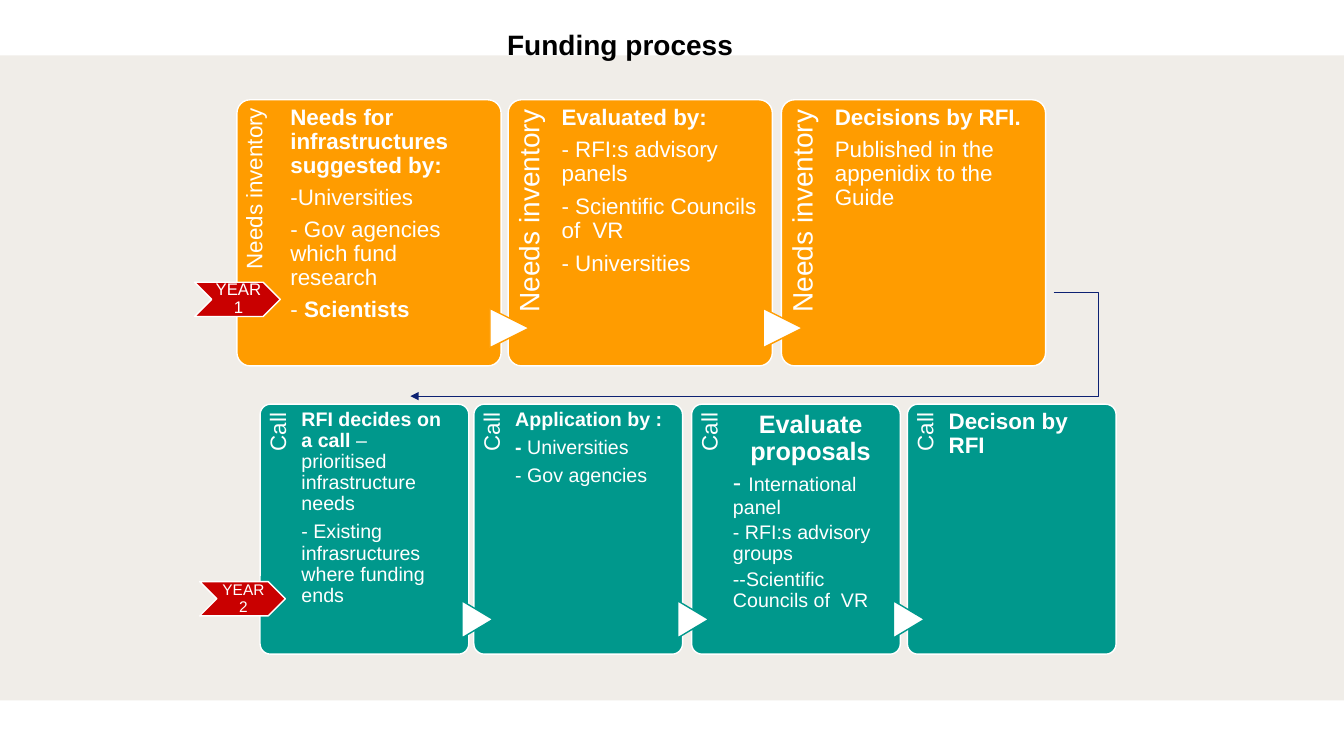
from dataclasses import dataclass

from lxml import etree
from pptx import Presentation
from pptx.dml.color import RGBColor
from pptx.enum.shapes import MSO_CONNECTOR, MSO_SHAPE
from pptx.enum.text import MSO_ANCHOR, MSO_AUTO_SIZE, PP_ALIGN
from pptx.oxml.ns import qn
from pptx.util import Emu, Pt

PX = 9144
FONT = "Arial"
WHITE, ORANGE, TEAL, RED = "FFFFFF", "FF9C00", "00988C", "C90000"
LEFT, CENTER, RIGHT = PP_ALIGN.LEFT, PP_ALIGN.CENTER, PP_ALIGN.RIGHT
TOP, MIDDLE = MSO_ANCHOR.TOP, MSO_ANCHOR.MIDDLE
RECT, ROUND_RECT = MSO_SHAPE.RECTANGLE, MSO_SHAPE.ROUNDED_RECTANGLE
CHEVRON, TRIANGLE = MSO_SHAPE.CHEVRON, MSO_SHAPE.FLOWCHART_EXTRACT
ELBOW = MSO_CONNECTOR.ELBOW
NO_FIT = MSO_AUTO_SIZE.NONE


@dataclass
class Run:
    text: str
    size: int = 16
    bold: bool = False


@dataclass
class Para:
    runs: list[Run]
    align: PP_ALIGN = LEFT
    after: float | None = None


@dataclass
class Card:
    left: int
    label_size: int
    inset: int
    paras: list[Para]


@dataclass
class Row:
    label: str
    color: str
    top: int
    width: int
    height: int
    label_box: tuple[int, int, int, int]
    text_dx: int
    text_width: int
    arrow: tuple[int, int, int, int]
    pitch: int
    cards: list[Card]


@dataclass
class Year:
    text: str
    left: int
    top: int
    size: int


def px(n: int) -> Emu:
    return Emu(n * PX)


def rgb(color: str) -> RGBColor:
    return RGBColor.from_string(color)


def line(text: str, size: int = 16, bold: bool = False, align: PP_ALIGN = LEFT,
         after: float | None = None) -> Para:
    return Para([Run(text, size, bold)], align, after)


def write(tf, paras: list[Para], color: str = WHITE, spacing: float = 0.9,
          insets: tuple[int, int, int, int] = (0, 0, 0, 0),
          anchor: MSO_ANCHOR = TOP, wrap: bool = True) -> None:
    tf.auto_size, tf.word_wrap, tf.vertical_anchor = NO_FIT, wrap, anchor
    tf.margin_left, tf.margin_top, tf.margin_right, tf.margin_bottom = map(px, insets)
    for i, para in enumerate(paras):
        p = tf.add_paragraph() if i else tf.paragraphs[0]
        p.alignment, p.line_spacing = para.align, spacing
        p.space_before = Pt(0)
        p.space_after = Pt(para.runs[-1].size * 0.35 if para.after is None else para.after)
        for run in para.runs:
            r = p.add_run()
            r.text = run.text
            r.font.name, r.font.size, r.font.bold = FONT, Pt(run.size), run.bold
            r.font.color.rgb = rgb(color)


def add_shape(s, kind: MSO_SHAPE, box: tuple[int, int, int, int], fill: str,
              outline: str | None = None, rotation: int = 0):
    sp = s.shapes.add_shape(kind, *map(px, box))
    sp.shadow.inherit = False
    sp.rotation = rotation
    sp.fill.solid()
    sp.fill.fore_color.rgb = rgb(fill)
    if outline:
        sp.line.color.rgb = rgb(outline)
        sp.line.width = Pt(1)
    else:
        sp.line.fill.background()
    return sp


def add_text(s, box: tuple[int, int, int, int], paras: list[Para],
             insets: tuple[int, int, int, int], rotation: int = 0) -> None:
    sp = s.shapes.add_textbox(*map(px, box))
    sp.rotation = rotation
    write(sp.text_frame, paras, insets=insets)


def add_row(s, row: Row) -> None:
    label_dx, label_top, label_w, label_h = row.label_box
    arrow_left, arrow_top, arrow_w, arrow_h = row.arrow
    for i, card in enumerate(row.cards):
        box = (card.left, row.top, row.width, row.height)
        add_shape(s, ROUND_RECT, box, row.color, WHITE).adjustments[0] = 0.05
        big = card.label_size > 16
        add_text(s, (card.left + label_dx, label_top, label_w, label_h),
                 [line(row.label, card.label_size, align=RIGHT)],
                 (0, 7, 10, 0) if big else (0, 6, 8, 0), rotation=270)
        if i:
            add_shape(s, TRIANGLE, (arrow_left + (i - 1) * row.pitch, arrow_top, arrow_w, arrow_h),
                      WHITE, row.color, rotation=90)
        add_text(s, (card.left + row.text_dx, row.top, row.text_width, row.height),
                 card.paras, (0, card.inset, 0, 0))


def add_elbow(s, start: tuple[int, int], end: tuple[int, int], bend: int, color: str) -> None:
    c = s.shapes.add_connector(ELBOW, *map(px, start + end))
    c.line.color.rgb = rgb(color)
    c.line.width = Pt(0.5)
    props = c._element.spPr
    guides = props.find(qn("a:prstGeom")).get_or_add_avLst()
    etree.SubElement(guides, qn("a:gd"), name="adj1", fmla=f"val {bend}")
    etree.SubElement(props.find(qn("a:ln")), qn("a:tailEnd"), type="triangle")
    etree.SubElement(props, qn("a:effectLst"))


ROWS = [
    Row("Needs inventory", ORANGE, 99, 262, 264, (-82, 181, 216, 52), 53, 195,
        (486, 306, 39, 39), 271, [
            Card(235, 16, 6, [
                line("Needs for infrastructures suggested by:", bold=True),
                line("-Universities"),
                line("- Gov agencies which fund research"),
                Para([Run("- "), Run("Scientists", bold=True)])]),
            Card(504, 20, 6, [
                line("Evaluated by:", bold=True, after=6),
                line("- RFI:s advisory panels", after=6),
                line("- Scientific Councils of  VR", after=6),
                line("- Universities", after=6)]),
            Card(775, 20, 6, [
                line("Decisions by RFI.", bold=True),
                line("Published in the appenidix to the Guide")])]),
    Row("Call", TEAL, 401, 207, 248, (-81, 483, 204, 41), 41, 154,
        (455, 599, 37, 31), 214, [
            Card(258, 16, 5, [
                Para([Run("RFI decides on a call ", 14, True),
                      Run("– prioritised infrastructure needs", 14)]),
                line("- Existing infrasructures where funding ends", 14)]),
            Card(470, 16, 5, [
                line("Application by :", 14, True),
                Para([Run("- ", 14, True), Run("Universities", 14)]),
                line("- Gov agencies", 14)]),
            Card(686, 16, 7, [
                line("Evaluate proposals", 18, True, CENTER, 3),
                Para([Run("- ", 18), Run("International panel", 14)], after=3),
                line("- RFI:s advisory groups", 14, after=3),
                line("--Scientific Councils of  VR", 14)]),
            Card(900, 16, 6, [line("Decison by RFI", bold=True)])]),
]
YEARS = [Year("YEAR 1", 193, 280, 12), Year("YEAR 2", 198, 577, 11)]


def main() -> None:
    prs = Presentation()
    prs.slide_width, prs.slide_height = px(1333), px(750)
    s = prs.slides.add_slide(prs.slide_layouts[5])

    title = s.shapes.title
    title.left, title.top, title.width, title.height = map(px, (493, 22, 246, 77))
    write(title.text_frame, [line("Funding process", 20, True, after=0)], "000000",
          spacing=1.0, insets=(10, 5, 10, 5), wrap=False)
    band = add_shape(s, RECT, (0, 55, 1333, 640), "F0EDE8")
    title._element.addprevious(band._element)

    for row in ROWS:
        add_row(s, row)
    for year in YEARS:
        sp = add_shape(s, CHEVRON, (year.left, year.top, 85, 34), RED, WHITE)
        write(sp.text_frame, [line(year.text, year.size, align=CENTER)],
              insets=(2, 1, 0, 1), anchor=MIDDLE)
    add_elbow(s, (1045, 290), (407, 393), -6900, "0D2172")
    prs.save("out.pptx")


if __name__ == "__main__":
    main()
